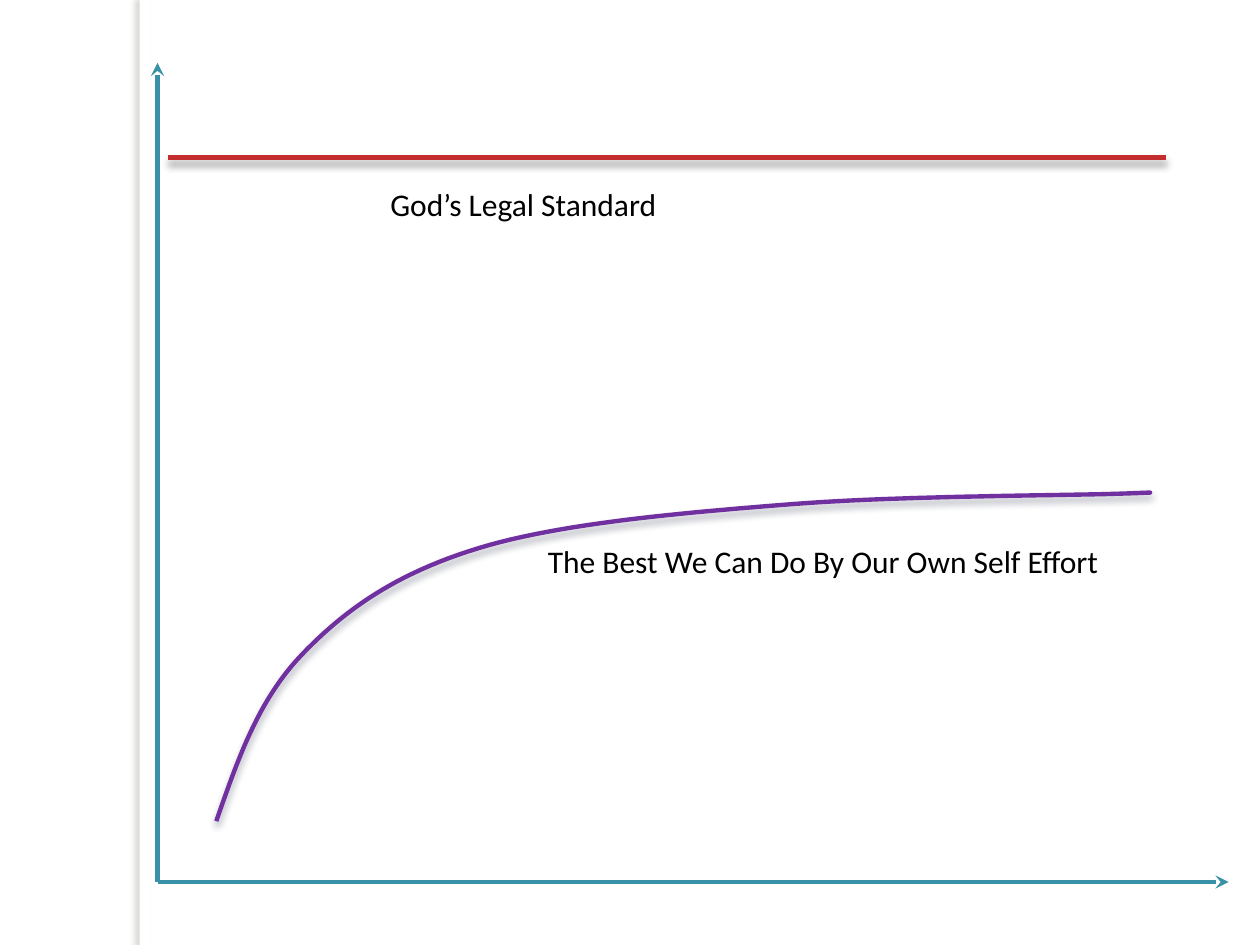
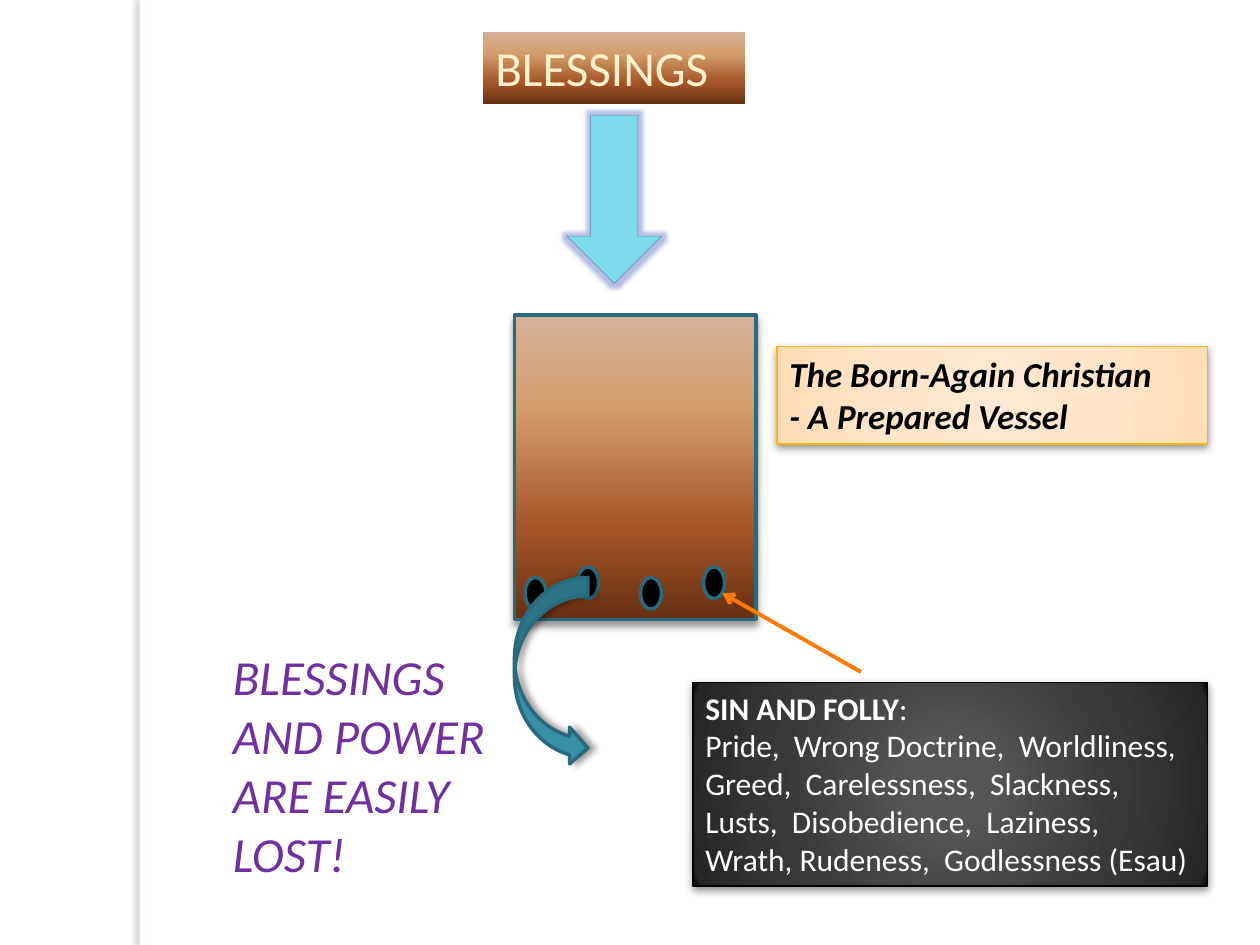
from lxml import etree
from pptx import Presentation
from pptx.dml.color import RGBColor
from pptx.enum.shapes import MSO_CONNECTOR, MSO_SHAPE
from pptx.enum.text import MSO_ANCHOR, PP_ALIGN
from pptx.oxml.ns import qn
from pptx.util import Inches, Pt

RECTANGLE, OVAL = MSO_SHAPE.RECTANGLE, MSO_SHAPE.OVAL
DOWN_ARROW, CURVED_ARROW = MSO_SHAPE.DOWN_ARROW, MSO_SHAPE.CURVED_RIGHT_ARROW
STRAIGHT = MSO_CONNECTOR.STRAIGHT
TOP, LEFT = MSO_ANCHOR.TOP, PP_ALIGN.LEFT

# The slide is a grid of 120 columns by 90 rows
COLUMNS, ROWS = 120, 90
CELL = Inches(10) / COLUMNS
FONT = "Calibri"

COLORS = {
    "white": "FFFFFF", "black": "000000", "teal": "3891A7", "dark teal": "296B7C",
    "red": "C32D2E", "purple": "7030A0", "cyan": "7DD9EC", "arrow edge": "5A86A8",
    "glow": "475AB8", "orange": "FF7B00", "gold": "FEB80A", "cream": "FFF1CE",
    "band shadow": "736F63", "curve shadow": "242D46",
}
# Gradients: (position in percent, colour)
WOOD = [(0, "D6B19C"), (30, "D49E6C"), (70, "A65528"), (100, "663012")]
PEACH = [(0, "FFE9D3"), (50, "FFE5C9"), (97, "FFDDB7"), (100, "FFDBB2")]
CHARCOAL = [(0, "555555"), (15, "555555"), (62, "393939"), (97, "262626"), (100, "000000")]

# Shadows: colour, opacity, blur, distance, direction
DROP = ("black", 40, 4, 3, 90)
CARD = ("black", 43, 5, 2, 90)
SIDE = ("black", 40, 4, 3, 0)
BAND = ("band shadow", 25, 3, 3, 180)
CURVE = ("curve shadow", 40, 4, 3, 90)

# Effort curve: a start point, then three control points for each segment
CURVE_START = (20.6, 78.2)
CURVE_SEGMENTS = [
    ((22.6, 72.5), (24.5, 66.8), (28.7, 62.4)),
    ((32.8, 58.1), (37.7, 54.6), (45.6, 52.2)),
    ((53.4, 49.8), (65.4, 48.8), (75.6, 48)),
    ((85.9, 47.2), (101.9, 47.2), (107.2, 47)),
    ((112.4, 46.8), (107.3, 47), (107.3, 47)),
]


def grid(*cells):
    return [round(cell * CELL) for cell in cells]


def rgb(name):
    return RGBColor.from_string(COLORS[name])


def add_element(parent, tag, **attributes):
    element = etree.SubElement(parent, qn("a:" + tag))
    for name, value in attributes.items():
        element.set(name, str(value))
    return element


def add_effect(effects, tag, color, opacity, **attributes):
    effect = add_element(effects, tag, **attributes)
    tint = add_element(effect, "srgbClr", val=COLORS[color])
    add_element(tint, "alpha", val=opacity * 1000)


def add_shadow(effects, color, opacity, blur, distance, direction):
    add_effect(effects, "outerShdw", color, opacity, blurRad=Pt(blur), dist=Pt(distance),
               dir=direction * 60000, algn="ctr", rotWithShape=0)


def fill_gradient(shape, stops, radial):
    shape.fill.gradient()
    gradient = shape.element.spPr.find(qn("a:gradFill"))
    for child in list(gradient):
        gradient.remove(child)
    stop_list = add_element(gradient, "gsLst")
    for position, color in stops:
        stop = add_element(stop_list, "gs", pos=position * 1000)
        add_element(stop, "srgbClr", val=color)
    if radial:
        path = add_element(gradient, "path", path="circle")
        add_element(path, "fillToRect", l=50000, t=50000, r=50000, b=50000)
    else:
        add_element(gradient, "lin", ang=90 * 60000, scaled=0)


def style_shape(shape, fill=None, line=None, width=2, shadow=None, radial=False):
    if fill is None:
        shape.fill.background()
    elif isinstance(fill, list):
        fill_gradient(shape, fill, radial)
    else:
        shape.fill.solid()
        shape.fill.fore_color.rgb = rgb(fill)
    if line:
        shape.line.color.rgb = rgb(line)
        shape.line.width = Pt(width)
    else:
        shape.line.fill.background()
    shape.shadow.inherit = False
    if shadow:
        add_shadow(shape.element.spPr.find(qn("a:effectLst")), *shadow)


def add_shape(slide, kind, box, fill, **style):
    shape = slide.shapes.add_shape(kind, *grid(*box))
    style_shape(shape, fill, **style)
    return shape


def add_line(slide, start, end, color, width, arrow=None, shadow=None):
    connector = slide.shapes.add_connector(STRAIGHT, *grid(*start, *end))
    connector.line.color.rgb = rgb(color)
    connector.line.width = Pt(width)
    if arrow:
        add_element(connector.line._get_or_add_ln(), "tailEnd", type=arrow)
    effects = add_element(connector.element.spPr, "effectLst")
    if shadow:
        add_shadow(effects, *shadow)


def write_text(shape, paragraphs, size, color, italic=False):
    """Each paragraph is a list of (text, bold) runs; None breaks the line."""
    frame = shape.text_frame
    frame.word_wrap = True
    frame.vertical_anchor = TOP
    for index, runs in enumerate(paragraphs):
        paragraph = frame.paragraphs[0] if index == 0 else frame.add_paragraph()
        paragraph.alignment = LEFT
        for item in runs:
            if item is None:
                paragraph.add_line_break()
                continue
            run = paragraph.add_run()
            run.text, run.font.bold = item
            run.font.name = FONT
            run.font.size = Pt(size)
            run.font.italic = italic
            run.font.color.rgb = rgb(color)


def add_text(slide, box, paragraphs, size, color, italic=False):
    write_text(slide.shapes.add_textbox(*grid(*box)), paragraphs, size, color, italic)


def curve_points(steps=24):
    start = CURVE_START
    for first, second, end in CURVE_SEGMENTS:
        for step in range(1, steps + 1):
            t = step / steps
            yield tuple(
                (1 - t) ** 3 * a + 3 * (1 - t) ** 2 * t * b + 3 * (1 - t) * t ** 2 * c + t ** 3 * d
                for a, b, c, d in zip(start, first, second, end))
        start = end


def add_effort_curve(slide):
    builder = slide.shapes.build_freeform(*grid(*CURVE_START))
    builder.add_line_segments([grid(*point) for point in curve_points()], close=False)
    style_shape(builder.convert_to_shape(), line="purple", width=2.5, shadow=CURVE)


def add_slide(presentation):
    slide = presentation.slides.add_slide(presentation.slide_layouts[6])
    add_shape(slide, RECTANGLE, (13.3, 0, 1, ROWS), "white", shadow=BAND)
    return slide


def build_standard_slide(presentation):
    slide = add_slide(presentation)
    add_effort_curve(slide)
    # Axes and the standard
    origin = (15, 84)
    for axis_end in ((15, 6), (117, 84)):
        add_line(slide, origin, axis_end, "teal", 2.5, arrow="stealth")
    add_line(slide, (16, 15), (111, 15), "red", 3, shadow=DROP)
    # Labels
    add_text(slide, (36, 17, 70, 5), [[("God’s Legal Standard", False)]], 18, "black")
    add_text(slide, (51, 51, 67, 5),
             [[("The Best We Can Do By Our Own Self Effort", False)]], 18, "black")


def build_vessel_slide(presentation):
    slide = add_slide(presentation)
    # Vessel with its holes
    add_shape(slide, RECTANGLE, (49, 30, 23, 29), WOOD, line="dark teal", shadow=DROP)
    for column, row in ((50, 55), (55, 54), (61, 55), (67, 54)):
        add_shape(slide, OVAL, (column, row, 2, 3), "black", line="dark teal")

    # Blessings flowing in
    inflow = add_shape(slide, DOWN_ARROW, (54, 11, 9, 16), "cyan",
                       line="arrow edge", width=0.25)
    add_effect(inflow.element.spPr.find(qn("a:effectLst")), "glow", "glow", 40, rad=Pt(5))
    title = add_shape(slide, RECTANGLE, (46, 3, 25, 6.9), WOOD)
    write_text(title, [[("BLESSINGS", False)]], 28, "cream")

    # Explanations
    vessel_label = add_shape(slide, RECTANGLE, (74, 33, 41, 9.3), PEACH, radial=True,
                             line="gold", width=0.75, shadow=CARD)
    write_text(vessel_label,
               [[("The Born-Again Christian", True), None, ("- A Prepared Vessel", True)]],
               20, "black", italic=True)
    add_line(slide, (82, 64), (68.8, 56.5), "orange", 2.25, arrow="arrow")
    sins = add_shape(slide, RECTANGLE, (66, 65, 49, 19.4), CHARCOAL, radial=True,
                     line="black", width=0.75, shadow=CARD)
    write_text(sins, [
        [("SIN AND FOLLY", True), (":", False)],
        [("Pride,  Wrong Doctrine,  Worldliness, Greed,  Carelessness,  Slackness,  "
          "Lusts,  Disobedience,  Laziness,  Wrath, Rudeness,  Godlessness (Esau)", False)],
    ], 18, "white")

    # Blessings leaking out
    add_shape(slide, CURVED_ARROW, (49, 55, 7, 18), "teal", line="dark teal", shadow=SIDE)
    add_text(slide, (21, 61, 30, 23.9),
             [[("BLESSINGS AND POWER", False)], [("ARE EASILY LOST!", False)]],
             28, "purple", italic=True)


def main():
    presentation = Presentation()
    presentation.slide_width, presentation.slide_height = grid(COLUMNS, ROWS)
    build_standard_slide(presentation)
    build_vessel_slide(presentation)
    presentation.save("out.pptx")


if __name__ == "__main__":
    main()
